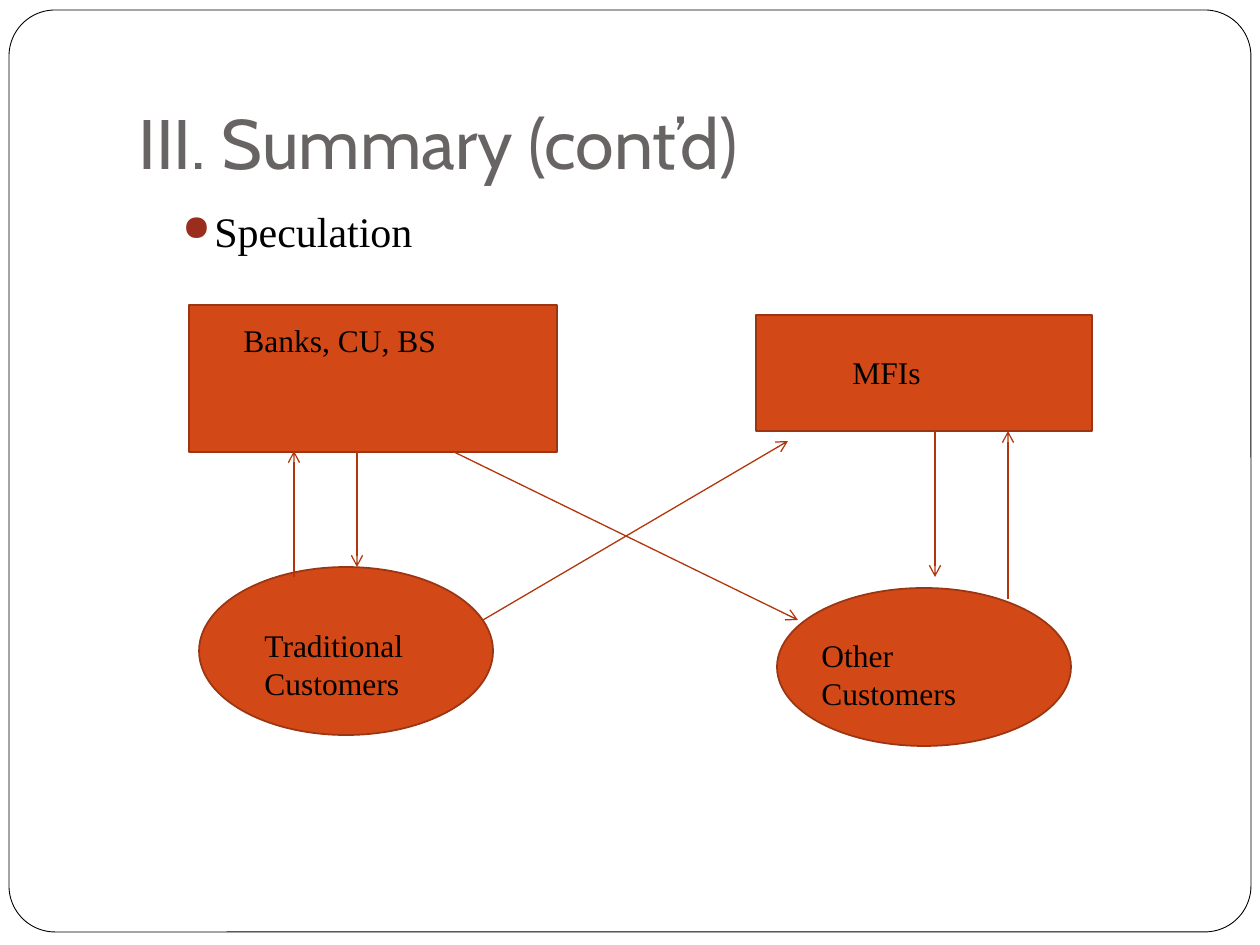
"""Build the summary slide on speculation between lenders and their customers."""
from dataclasses import dataclass
from typing import NamedTuple

from lxml.etree import SubElement
from pptx import Presentation
from pptx.dml.color import RGBColor
from pptx.enum.shapes import MSO_CONNECTOR, MSO_SHAPE
from pptx.enum.text import MSO_ANCHOR, MSO_AUTO_SIZE
from pptx.oxml.ns import qn
from pptx.util import Emu, Pt


@dataclass(frozen=True)
class Theme:
    """Colours, fonts, type sizes and line widths of the slide."""
    paper: str = "FFFFFF"
    ink: str = "000000"
    heading: str = "696464"
    bullet: str = "9B2D1F"
    party_fill: str = "D34817"
    party_line: str = "9C3511"
    flow: str = "B1360B"
    heading_font: str = "Cabin"
    body_font: str = "Times New Roman"
    heading_size: int = 40
    body_size: int = 24
    label_size: int = 18
    frame_width: float = 0.5
    party_width: float = 1
    flow_width: float = 0.75


class Box(NamedTuple):
    """Left, top, width and height in px."""
    left: int
    top: int
    width: int
    height: int


class Party(NamedTuple):
    """A lender or customer group with its separate label."""
    outline: MSO_SHAPE
    area: Box
    label: str
    label_area: Box


class Flow(NamedTuple):
    """An arrow from one point to another in px."""
    from_x: int
    from_y: int
    to_x: int
    to_y: int


THEME = Theme()
FRAME = Box(9, 10, 1242, 922)
HEADING = Box(126, 38, 1071, 158)
TOPIC = Box(126, 199, 1071, 630)
PARTIES = [
    Party(MSO_SHAPE.RECTANGLE, Box(189, 305, 368, 147),
          "Banks, CU, BS", Box(231, 315, 220, 50)),
    Party(MSO_SHAPE.RECTANGLE, Box(756, 315, 336, 116),
          "MFIs", Box(840, 347, 220, 50)),
    Party(MSO_SHAPE.OVAL, Box(199, 567, 294, 168),
          "Traditional Customers", Box(252, 620, 220, 89)),
    Party(MSO_SHAPE.OVAL, Box(777, 588, 294, 158),
          "Other Customers", Box(809, 630, 220, 89)),
]
FLOWS = [
    Flow(357, 451, 357, 567),
    Flow(935, 431, 935, 577),
    Flow(452, 451, 798, 620),
    Flow(294, 577, 294, 451),
    Flow(1008, 599, 1008, 431),
    Flow(483, 620, 788, 441),
]


def px(length: int) -> Emu:
    """Turn px into EMU at 126 px to the inch."""
    return Emu(round(length * 914400 / 126))


def rgb(colour: str) -> RGBColor:
    """Turn a hex string into a colour."""
    return RGBColor.from_string(colour)


def draw_shape(slide, outline: MSO_SHAPE, area: Box, fill: str, line: str, width: float):
    """Draw a filled and outlined preset shape."""
    shape = slide.shapes.add_shape(outline, *map(px, area))
    shape.shadow.inherit = False
    shape.fill.solid()
    shape.fill.fore_color.rgb = rgb(fill)
    shape.line.color.rgb = rgb(line)
    shape.line.width = Pt(width)
    return shape


def draw_text(slide, area: Box, wording: str, size: int, colour: str = THEME.ink,
              font: str = THEME.body_font):
    """Draw a wrapping one-paragraph text box."""
    frame = slide.shapes.add_textbox(*map(px, area)).text_frame
    frame.word_wrap = True
    paragraph = frame.paragraphs[0]
    paragraph.text = wording
    paragraph.font.size = Pt(size)
    paragraph.font.name = font
    paragraph.font.color.rgb = rgb(colour)
    return frame


def add_bullet(paragraph, colour: str, percent: int, margin: int, hanging: int) -> None:
    """Give a paragraph a round bullet with a hanging indent in px."""
    properties = paragraph._p.get_or_add_pPr()
    properties.set("marL", str(px(margin)))
    properties.set("indent", str(-px(hanging)))
    bullet_parts = [
        SubElement(properties, qn("a:buClr")),
        SubElement(properties, qn("a:buSzPct"), val=str(percent * 1000)),
        SubElement(properties, qn("a:buChar"), char="●"),
    ]
    SubElement(bullet_parts[0], qn("a:srgbClr"), val=colour)
    for position, part in enumerate(bullet_parts):
        properties.insert(position, part)


def draw_flow(slide, flow: Flow) -> None:
    """Draw an arrow with an open head at its end."""
    arrow = slide.shapes.add_connector(MSO_CONNECTOR.STRAIGHT, *map(px, flow))
    arrow.line.color.rgb = rgb(THEME.flow)
    arrow.line.width = Pt(THEME.flow_width)
    SubElement(arrow.line._get_or_add_ln(), qn("a:tailEnd"), type="arrow")
    SubElement(arrow._element.spPr, qn("a:effectLst"))


def main() -> None:
    """Build and save the slide."""
    deck = Presentation()
    deck.slide_width, deck.slide_height = px(1260), px(945)
    slide = deck.slides.add_slide(deck.slide_layouts[6])

    border = draw_shape(slide, MSO_SHAPE.ROUNDED_RECTANGLE, FRAME,
                        THEME.paper, THEME.ink, THEME.frame_width)
    border.adjustments[0] = 0.05

    heading = draw_text(slide, HEADING, "III. Summary (cont’d)",
                        THEME.heading_size, THEME.heading, THEME.heading_font)
    heading.vertical_anchor = MSO_ANCHOR.BOTTOM
    heading.margin_bottom = px(13)

    topic = draw_text(slide, TOPIC, "Speculation", THEME.body_size).paragraphs[0]
    topic.space_before = Pt(3.7)
    add_bullet(topic, THEME.bullet, percent=85, margin=76, hanging=32)
    topic_properties = topic._p.get_or_add_pPr()
    topic_properties.insert(0, topic_properties.find(qn("a:spcBef")))

    for party in PARTIES:
        draw_shape(slide, party.outline, party.area,
                   THEME.party_fill, THEME.party_line, THEME.party_width)
    for party in PARTIES:
        label = draw_text(slide, party.label_area, party.label, THEME.label_size)
        label.auto_size = MSO_AUTO_SIZE.SHAPE_TO_FIT_TEXT
    for flow in FLOWS:
        draw_flow(slide, flow)

    deck.save("out.pptx")


if __name__ == "__main__":
    main()
